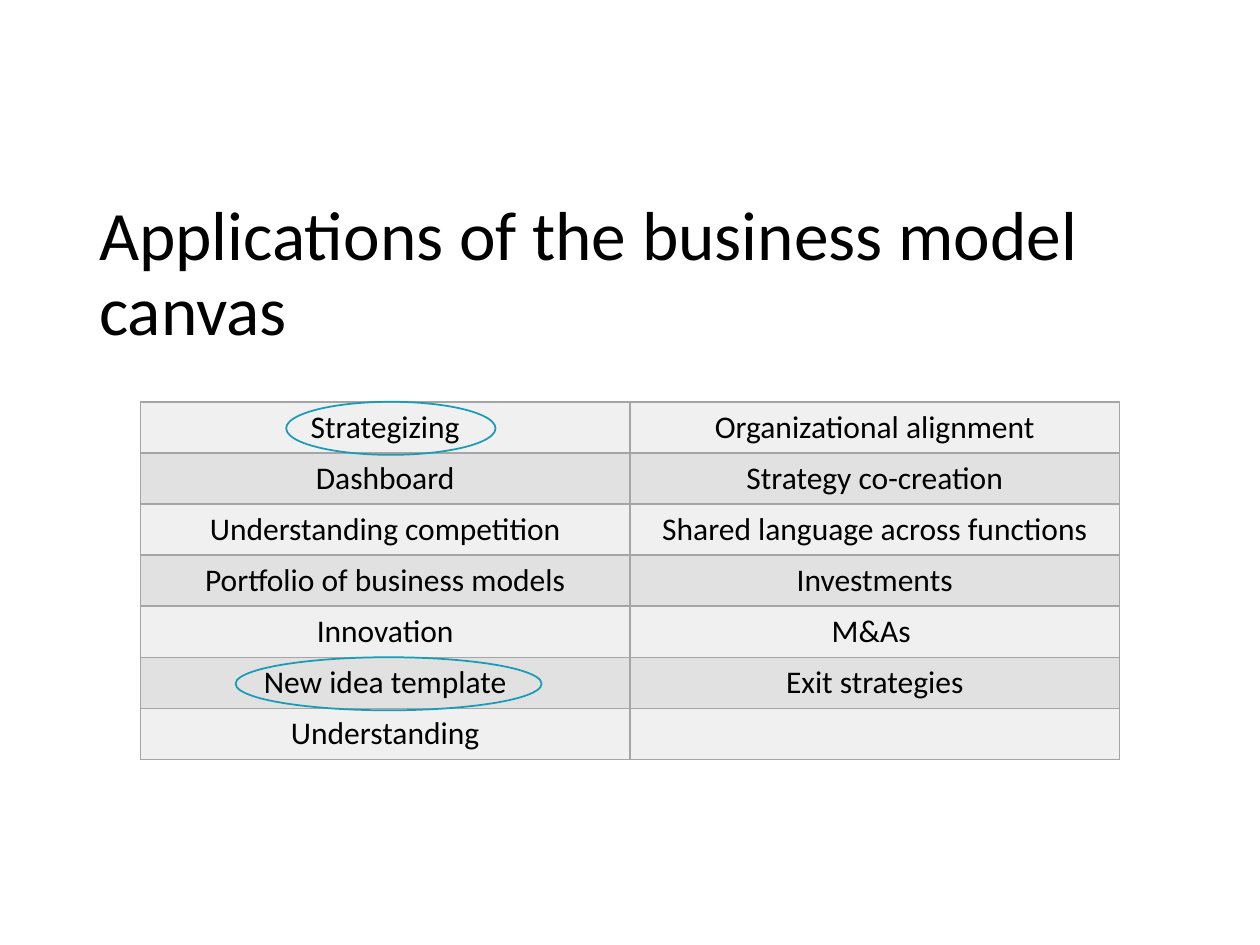
from pptx import Presentation
from pptx.dml.color import RGBColor
from pptx.enum.shapes import MSO_SHAPE as Shape
from pptx.enum.text import MSO_ANCHOR as Anchor, PP_ALIGN as Align
from pptx.oxml import parse_xml
from pptx.oxml.ns import nsdecls
from pptx.util import Cm, Pt

BLACK = RGBColor(0x00, 0x00, 0x00)
LIGHT = RGBColor(0xF0, 0xF0, 0xF0)
DARK = RGBColor(0xE1, 0xE1, 0xE1)
GRID = RGBColor(0xA5, 0xA5, 0xA5)
TEAL = RGBColor(0x18, 0x9B, 0xB5)

TABLE_LEFT, TABLE_TOP, TABLE_WIDTH, ROW_HEIGHT = 2.83, 8.1, 19.74, 1.03
APPLICATIONS = [
    ("Strategizing", "Organizational alignment"),
    ("Dashboard", "Strategy co-creation"),
    ("Understanding competition", "Shared language across functions"),
    ("Portfolio of business models", "Investments"),
    ("Innovation", "M&As "),
    ("New idea template", "Exit strategies"),
    ("Understanding", ""),
]
HIGHLIGHTS = [(0, 5.77, 4.22), (5, 4.75, 6.17)]


class CanvasSlide:
    """Holds the style and the current slide, and draws each kind of element."""

    font_name = "Calibri"

    def __init__(self, slide):
        self.slide = slide

    def set_text(self, frame, text, size, align):
        frame.text = text
        paragraph = frame.paragraphs[0]
        paragraph.alignment = align
        font = paragraph.font
        if paragraph.runs:
            font = paragraph.runs[0].font
        font.name, font.size = self.font_name, Pt(size)
        font.color.rgb = BLACK
        return paragraph

    def title(self, text, left, top, width, height):
        box = self.slide.shapes.add_textbox(Cm(left), Cm(top), Cm(width), Cm(height))
        box.text_frame.word_wrap = True
        box.text_frame.vertical_anchor = Anchor.MIDDLE
        self.set_text(box.text_frame, text, 39.6, Align.LEFT).line_spacing = 0.9

    def border(self, cell):
        properties = cell._tc.get_or_add_tcPr()
        for side in ("lnL", "lnR", "lnT", "lnB"):
            properties.append(parse_xml(
                f'<a:{side} {nsdecls("a")} w="{Pt(1)}"><a:solidFill>'
                f'<a:srgbClr val="{GRID}"/></a:solidFill></a:{side}>'))

    def table(self, rows, left, top, width, row_height):
        grid = self.slide.shapes.add_table(
            len(rows), len(rows[0]), Cm(left), Cm(top), Cm(width),
            Cm(row_height * len(rows))).table
        grid.first_row = False
        for index, texts in enumerate(rows):
            grid.rows[index].height = Cm(row_height)
            for cell, text in zip(grid.rows[index].cells, texts):
                self.set_text(cell.text_frame, text, 18, Align.CENTER)
                self.border(cell)
                cell.fill.solid()
                cell.fill.fore_color.rgb = DARK if index % 2 else LIGHT

    def ring(self, left, top, width, height):
        oval = self.slide.shapes.add_shape(
            Shape.OVAL, Cm(left), Cm(top), Cm(width), Cm(height))
        oval.shadow.inherit = False
        oval.fill.background()
        oval.line.color.rgb = TEAL
        oval.line.width = Pt(1)


def main():
    deck = Presentation()
    deck.slide_width, deck.slide_height = Cm(25.4), Cm(19.05)
    canvas = CanvasSlide(deck.slides.add_slide(deck.slide_layouts[6]))
    canvas.title("Applications of the business model canvas", 1.75, 4.45, 21.9, 2.2)
    canvas.table(APPLICATIONS, TABLE_LEFT, TABLE_TOP, TABLE_WIDTH, ROW_HEIGHT)
    for row, left, width in HIGHLIGHTS:
        canvas.ring(left, TABLE_TOP + row * ROW_HEIGHT, width, 1.07)
    deck.save("out.pptx")


if __name__ == "__main__":
    main()
